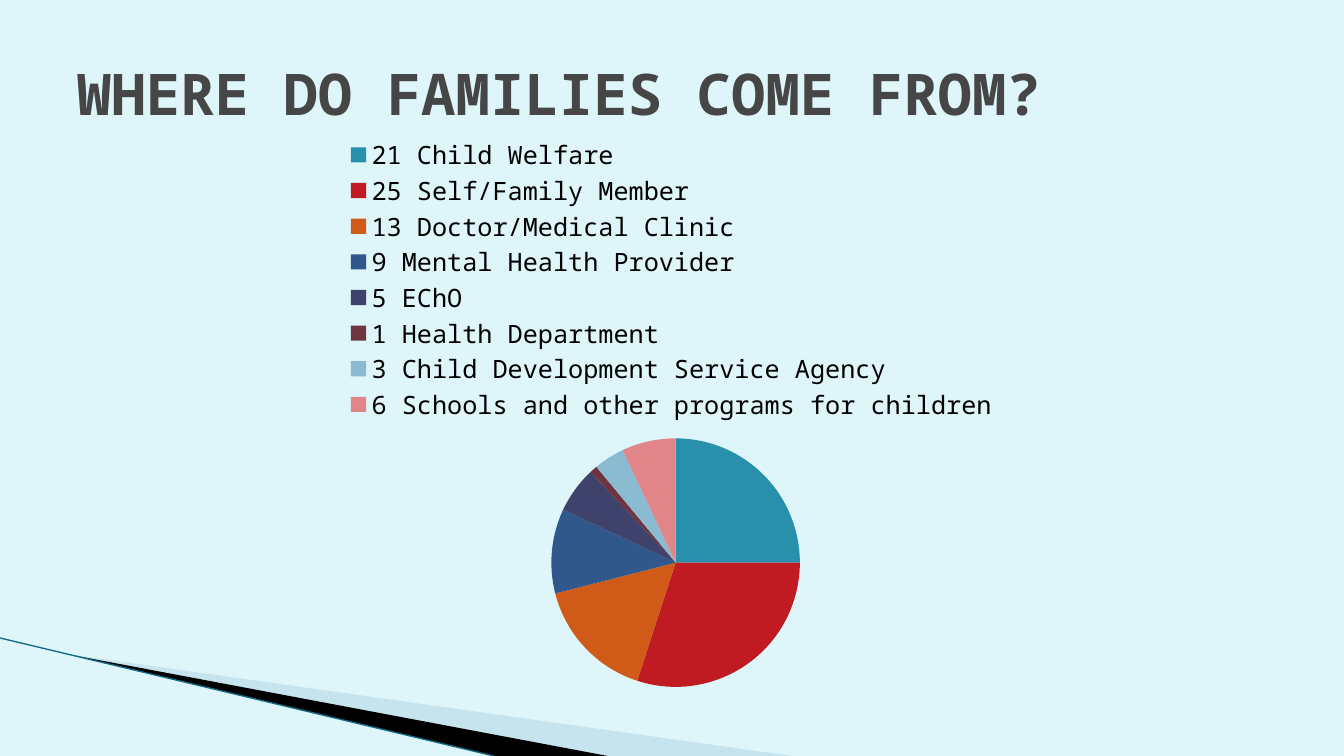
"""Build a slide with a pie chart of where families come from."""
import lxml.etree
import pptx
import pptx.chart.data
import pptx.dml.color
import pptx.enum.chart
import pptx.enum.shapes
import pptx.enum.text
import pptx.oxml.ns
import pptx.util

PX = 9071
THEME = {
    "font": "Noto Sans Mono",
    "title_size": 41,
    "legend_size": 18,
    "chart_size": 10,
    "background": "DEF5FA",
    "title": "464646",
    "text": "000000",
    "pale_wedge": "A0CBDC",
    "dark_wedge": "000000",
    "edge": "0F6B88",
}
SOURCES = [
    ("21 Child Welfare", 25, "2990AC"),
    ("25 Self/Family Member", 30, "C01B22"),
    ("13 Doctor/Medical Clinic", 16, "D05A17"),
    ("9 Mental Health Provider", 11, "31588B"),
    ("5 EChO", 6, "3F426A"),
    ("1 Health Department", 1, "6E3541"),
    ("3 Child Development Service Agency", 4, "8ABBD0"),
    ("6 Schools and other programs for children", 7, "E28589"),
]
WEDGES = [
    ("pale_wedge", 40, [(74, 655), (792, 756), (608, 756)]),
    ("dark_wedge", 100, [(72, 655), (608, 756), (494, 756)]),
]


def rgb(value):
    return pptx.dml.color.RGBColor.from_string(value)


def place(element, target, x, y, w, h):
    """Give a chart part a fixed place, in fractions of the chart."""
    for old in element.findall(pptx.oxml.ns.qn("c:layout")):
        element.remove(old)
    layout = lxml.etree.Element(pptx.oxml.ns.qn("c:layout"))
    manual = lxml.etree.SubElement(layout, pptx.oxml.ns.qn("c:manualLayout"))
    settings = [("xMode", "edge"), ("yMode", "edge"), ("x", x), ("y", y), ("w", w), ("h", h)]
    if target:
        settings.insert(0, ("layoutTarget", target))
    for tag, value in settings:
        lxml.etree.SubElement(manual, pptx.oxml.ns.qn(f"c:{tag}")).set("val", str(value))
    element.insert(0 if target else 1, layout)


deck = pptx.Presentation()
deck.slide_width = 1344 * PX
deck.slide_height = 756 * PX
slide = deck.slides.add_slide(deck.slide_layouts[6])
slide.background.fill.solid()
slide.background.fill.fore_color.rgb = rgb(THEME["background"])

for color, opacity, corners in WEDGES:
    outline = slide.shapes.build_freeform(*corners[0], scale=PX)
    outline.add_line_segments(corners[1:], close=True)
    wedge = outline.convert_to_shape()
    wedge.shadow.inherit = False
    wedge.line.fill.background()
    wedge.fill.solid()
    wedge.fill.fore_color.rgb = rgb(THEME[color])
    if opacity < 100:
        tint = wedge.fill._xPr.find(".//" + pptx.oxml.ns.qn("a:srgbClr"))
        alpha = lxml.etree.SubElement(tint, pptx.oxml.ns.qn("a:alpha"))
        alpha.set("val", str(opacity * 1000))

edge = slide.shapes.add_connector(
    pptx.enum.shapes.MSO_CONNECTOR.STRAIGHT, 0, 638 * PX, 494 * PX, 756 * PX)
edge.line.color.rgb = rgb(THEME["edge"])
edge.line.width = pptx.util.Pt(0.95)
lxml.etree.SubElement(edge._element.spPr, pptx.oxml.ns.qn("a:effectLst"))

referrals = pptx.chart.data.CategoryChartData()
referrals.categories = [label for label, share, color in SOURCES]
referrals.add_series("Series 1", [share for label, share, color in SOURCES])
pie = slide.shapes.add_chart(
    pptx.enum.chart.XL_CHART_TYPE.PIE,
    260 * PX, 118 * PX, 857 * PX, 622 * PX, referrals).chart
pie.has_title = False
pie.font.name = THEME["font"]
pie.font.size = pptx.util.Pt(THEME["chart_size"])
pie.font.color.rgb = rgb(THEME["text"])
pie.plots[0].vary_by_categories = True
for index, (label, share, color) in enumerate(SOURCES):
    slice_format = pie.plots[0].series[0].points[index].format
    slice_format.fill.solid()
    slice_format.fill.fore_color.rgb = rgb(color)
    slice_format.line.fill.background()

pie.has_legend = True
pie.legend.position = pptx.enum.chart.XL_LEGEND_POSITION.TOP
pie.legend.include_in_layout = True
pie.legend.font.name = THEME["font"]
pie.legend.font.size = pptx.util.Pt(THEME["legend_size"])
pie.legend.font.color.rgb = rgb(THEME["text"])
place(pie.legend._element, None, 0.1, 0.03, 0.76, 0.46)
place(pie._chartSpace.chart.plotArea, "inner", 0.34, 0.43, 0.29, 0.57)

heading = slide.shapes.add_textbox(67 * PX, 30 * PX, 1210 * PX, 126 * PX).text_frame
heading.word_wrap = True
heading.vertical_anchor = pptx.enum.text.MSO_ANCHOR.MIDDLE
heading.text = "WHERE DO FAMILIES COME FROM?"
heading_font = heading.paragraphs[0].runs[0].font
heading_font.name = THEME["font"]
heading_font.size = pptx.util.Pt(THEME["title_size"])
heading_font.bold = True
heading_font.color.rgb = rgb(THEME["title"])

deck.save("out.pptx")
